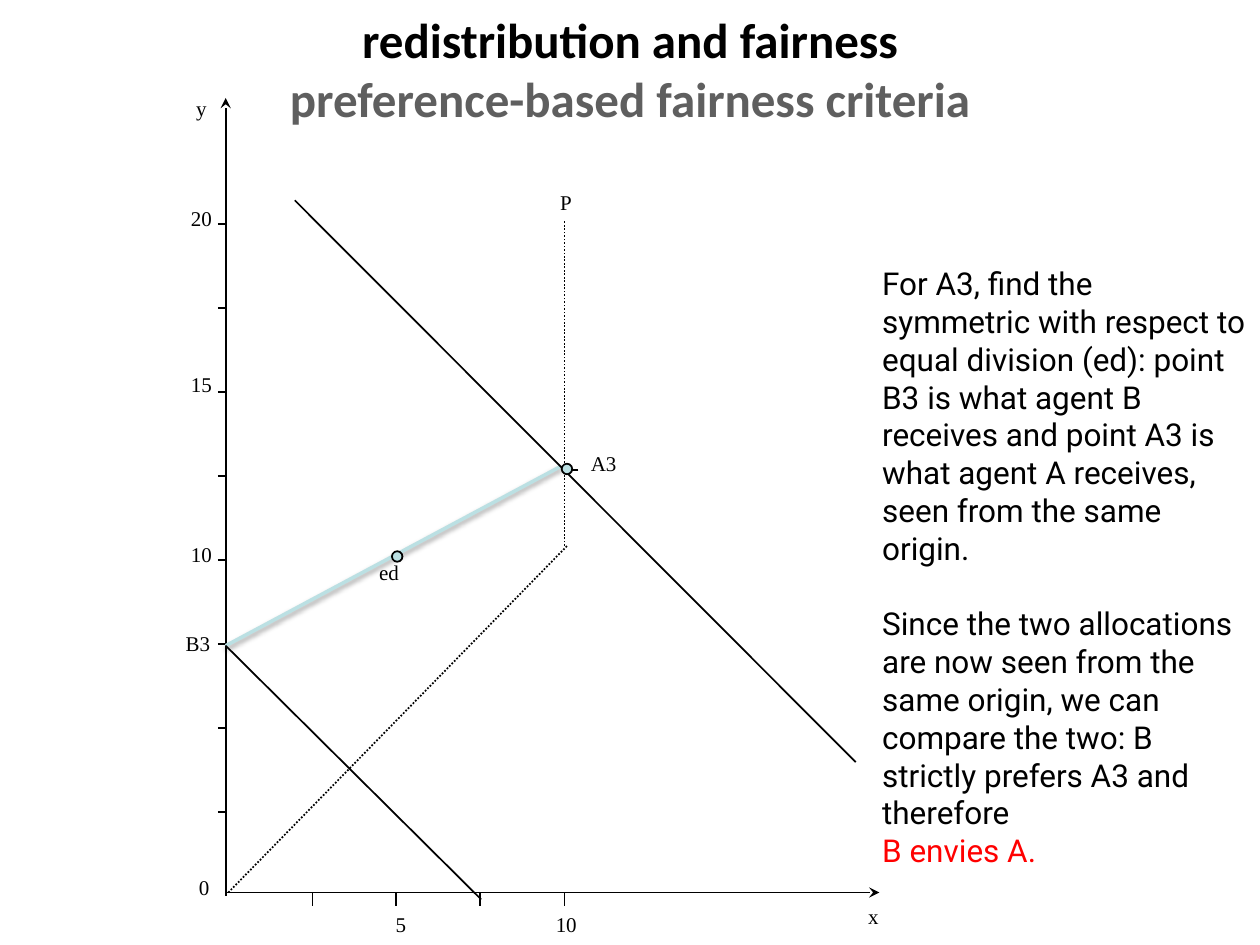
from dataclasses import dataclass

from lxml.etree import SubElement
from pptx import Presentation
from pptx.dml.color import RGBColor as RGB
from pptx.enum.dml import MSO_LINE_DASH_STYLE as Dash
from pptx.enum.shapes import MSO_CONNECTOR as Connector, MSO_SHAPE as Shape
from pptx.enum.text import MSO_ANCHOR as Anchor, MSO_AUTO_SIZE as AutoSize, PP_ALIGN as Align
from pptx.oxml.ns import qn
from pptx.util import Pt


@dataclass(frozen=True)
class Theme:
    ink: RGB = RGB(0, 0, 0)
    subtitle: RGB = RGB(0x5F, 0x5F, 0x5F)
    accent: RGB = RGB(0xBB, 0xE0, 0xE3)
    alert: RGB = RGB(0xFF, 0, 0)
    title_font: str = "Calibri"
    body_font: str = "Roboto"
    label_font: str = "Times New Roman"
    title_size: float = 28
    body_size: float = 18
    label_size: float = 12
    body_gap: float = 21.6


class DiagramSlide:
    def __init__(self, slide, theme):
        self.shapes = slide.shapes
        self.theme = theme

    def line(self, start, end, color=None, width=1, dash=None, arrow=False, shadow=False):
        connector = self.shapes.add_connector(
            Connector.STRAIGHT, *(Pt(v) for v in (*start, *end)))
        connector.line.color.rgb = color or self.theme.ink
        connector.line.width = Pt(width)
        if dash:
            connector.line.dash_style = dash
        properties = connector._element.spPr
        if arrow:
            SubElement(properties.find(qn("a:ln")), qn("a:tailEnd"), type="stealth")
        effects = SubElement(properties, qn("a:effectLst"))
        if shadow:
            outer = SubElement(effects, qn("a:outerShdw"), blurRad=str(Pt(3.1)),
                               dist=str(Pt(1.6)), dir="5400000", rotWithShape="0")
            tint = SubElement(outer, qn("a:srgbClr"), val=str(self.theme.ink))
            SubElement(tint, qn("a:alpha"), val="38000")

    def text_frame(self, left, top, width, height, wrap=True, grow=True):
        frame = self.shapes.add_textbox(Pt(left), Pt(top), Pt(width), Pt(height)).text_frame
        frame.word_wrap = wrap
        frame.auto_size = AutoSize.SHAPE_TO_FIT_TEXT if grow else AutoSize.NONE
        return frame

    def run(self, paragraph, text, font, size, color, bold=False):
        run = paragraph.add_run()
        run.text = text
        run.font.name = font
        run.font.size = Pt(size)
        run.font.color.rgb = color
        run.font.bold = bold

    def label(self, text, left, top, width, wrap=False):
        frame = self.text_frame(left, top, width, 21.6, wrap)
        self.run(frame.paragraphs[0], text, self.theme.label_font,
                 self.theme.label_size, self.theme.ink)

    def title(self, main, subtitle):
        theme = self.theme
        frame = self.text_frame(36, -6, 648, 90, grow=False)
        frame.vertical_anchor = Anchor.MIDDLE
        heading = frame.paragraphs[0]
        heading.alignment = Align.CENTER
        self.run(heading, main, theme.title_font, theme.title_size, theme.ink, True)
        heading.add_line_break()
        self.run(heading, subtitle, theme.title_font, theme.title_size, theme.subtitle, True)

    def explanation(self, left, top, width, height, entries):
        frame = self.text_frame(left, top, width, height)
        for index, (text, color, gap) in enumerate(entries):
            paragraph = frame.add_paragraph() if index else frame.paragraphs[0]
            paragraph.space_before = Pt(gap)
            self.run(paragraph, text, self.theme.body_font, self.theme.body_size, color)

    def point(self, left, top, size=6):
        dot = self.shapes.add_shape(Shape.FLOWCHART_CONNECTOR,
                                    Pt(left), Pt(top), Pt(size), Pt(size))
        dot.shadow.inherit = False
        dot.fill.solid()
        dot.fill.fore_color.rgb = self.theme.accent
        dot.line.color.rgb = self.theme.ink
        dot.line.width = Pt(1)


def main():
    theme = Theme()
    deck = Presentation()
    deck.slide_width, deck.slide_height = Pt(720), Pt(540)
    diagram = DiagramSlide(deck.slides.add_slide(deck.slide_layouts[6]), theme)

    # Axes and evenly spaced ticks
    axis_x, axis_y, tick_step = 129, 510, 48
    diagram.line((axis_x, axis_y), (502.5, axis_y), arrow=True)
    diagram.line((axis_x, 512), (axis_x, 56), arrow=True)
    for index in range(8):
        tick_y = 128 + index * tick_step
        diagram.line((axis_x - 4.5, tick_y), (axis_x, tick_y))
    for index in range(4):
        tick_x = 178.5 + index * tick_step
        diagram.line((tick_x, axis_y + 7.5), (tick_x, axis_y))

    # Axis names and values
    for text, left, top, width in (
        ("20", 102, 114, 26.6), ("15", 102, 209, 26.6), ("10", 102, 306, 26.6),
        ("0", 106.5, 496, 20.2), ("y", 105, 51, 20.2), ("x", 489, 512.5, 20.2),
    ):
        diagram.label(text, left, top, width)
    for text, left in (("5", 219), ("10", 310.5)):
        diagram.label(text, left, 517.5, 32, wrap=True)

    # Dotted path to P
    diagram.line((130.5, axis_y), (324, 312), dash=Dash.ROUND_DOT)
    diagram.line((322.5, 312), (322.5, 126), dash=Dash.ROUND_DOT)
    diagram.label("P", 313, 104.5, 21)

    # Symmetry segment from B3 to A3
    diagram.line((axis_x, 369), (320.5, 266.5), theme.accent, 2, shadow=True)

    # Budget lines
    diagram.line((489, 435.5), (168.5, 114.5))
    diagram.line((275, 514), (axis_x, 369))

    # Allocations
    diagram.line((330.5, 268.5), (326, 268.5))
    for text, left, top, width in (
        ("B3", 99, 357, 29), ("ed", 209.5, 316, 26), ("A3", 330.5, 254, 29.5),
    ):
        diagram.label(text, left, top, width)
    diagram.point(321, 265)
    diagram.point(224, 315)

    # Heading and explanation
    diagram.title("redistribution and fairness", "preference-based fairness criteria")
    diagram.explanation(497, 147.5, 223, 312.5, (
        ("For A3, find the symmetric with respect to equal division (ed): point B3 is "
         "what agent B receives and point A3 is what agent A receives, seen from the "
         "same origin.", theme.ink, 0),
        ("Since the two allocations are now seen from the same origin, we can compare "
         "the two: B strictly prefers A3 and therefore", theme.ink, theme.body_gap),
        ("B envies A.", theme.alert, 0),
    ))

    deck.save("out.pptx")


if __name__ == "__main__":
    main()
